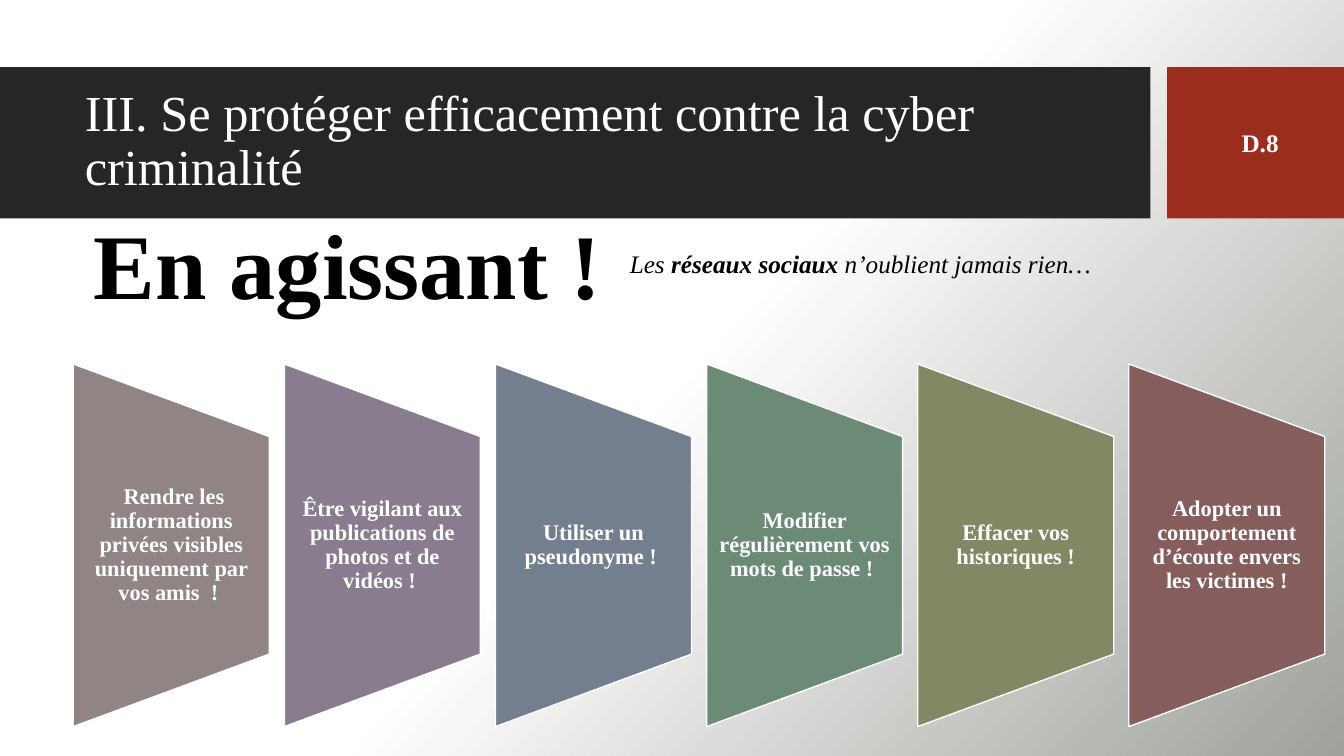
from copy import deepcopy

from pptx import Presentation
from pptx.dml.color import RGBColor
from pptx.enum.shapes import MSO_SHAPE
from pptx.enum.text import MSO_ANCHOR, PP_ALIGN
from pptx.oxml.ns import qn
from pptx.util import Pt

RECTANGLE = MSO_SHAPE.RECTANGLE
TRAPEZOID = MSO_SHAPE.FLOWCHART_MANUAL_OPERATION
TOP, MIDDLE = MSO_ANCHOR.TOP, MSO_ANCHOR.MIDDLE
LEFT, CENTER = PP_ALIGN.LEFT, PP_ALIGN.CENTER
FONT = "Times New Roman"


def color(value):
    return RGBColor.from_string(value)


def add_text(page, left, top, width, height, spans, size, fill,
             anchor=TOP, align=LEFT, spacing=1.0, wrap=True, inset=7.2, inset_y=3.6):
    box = page.shapes.add_textbox(Pt(left), Pt(top), Pt(width), Pt(height))
    frame = box.text_frame
    frame.word_wrap = wrap
    frame.vertical_anchor = anchor
    frame.margin_left = frame.margin_right = Pt(inset)
    frame.margin_top = frame.margin_bottom = Pt(inset_y)
    para = frame.paragraphs[0]
    para.alignment = align
    para.line_spacing = spacing
    for text, bold, italic in spans:
        span = para.add_run()
        span.text = text
        span.font.name = FONT
        span.font.size = Pt(size)
        span.font.bold = bold
        span.font.italic = italic
        span.font.color.rgb = color(fill)


deck = Presentation()
deck.slide_width, deck.slide_height = Pt(960), Pt(540)
page = deck.slides.add_slide(deck.slide_layouts[6])

background = page.background.fill
background.gradient()
background.gradient_angle = 318
start, end = background.gradient_stops
start.color.rgb, start.position = color("FFFFFF"), 0
end.color.rgb, end.position = color("9FA19A"), 1
stop_list = next(page.element.iter(qn("a:gsLst")))
middle_stop = deepcopy(stop_list[0])
middle_stop.set("pos", "50000")
stop_list.insert(1, middle_stop)

for left, width, fill in [(0, 821.8, "262626"), (833.6, 126.4, "9B2D1F")]:
    band = page.shapes.add_shape(RECTANGLE, Pt(left), Pt(48), Pt(width), Pt(108))
    band.shadow.inherit = False
    band.fill.solid()
    band.fill.fore_color.rgb = color(fill)
    band.line.fill.background()

add_text(page, 53.5, 59, 757, 85,
         [("III. Se protéger efficacement contre la cyber criminalité", False, False)],
         36, "FFFFFF", anchor=MIDDLE, spacing=0.9)

tips = [
    (" Rendre les informations privées visibles uniquement par vos amis  ! ", "918485"),
    ("Être vigilant aux publications de photos et de vidéos ! ", "8A7C8F"),
    ("Utiliser un pseudonyme ! ", "737F8E"),
    ("Modifier régulièrement vos mots de passe ! ", "6B8B77"),
    ("Effacer vos historiques !", "818864"),
    ("Adopter un comportement d’écoute envers les victimes !", "855D5D"),
]
card_width, card_height, card_top, pitch = 140, 259, 260, 150.8
for index, (text, fill) in enumerate(tips):
    left = 52.3 + index * pitch
    card = page.shapes.add_shape(
        TRAPEZOID,
        Pt(left + (card_width - card_height) / 2),
        Pt(card_top + (card_height - card_width) / 2),
        Pt(card_height), Pt(card_width))
    card.rotation = 270
    card.shadow.inherit = False
    card.fill.solid()
    card.fill.fore_color.rgb = color(fill)
    card.line.color.rgb = color("FFFFFF")
    card.line.width = Pt(1)
    add_text(page, left, 311.8, card_width, 155.5, [(text, True, False)], 16, "FFFFFF",
             anchor=MIDDLE, align=CENTER, spacing=0.9, inset=8, inset_y=0)

add_text(page, 879.8, 87.1, 41, 29, [("D.8", True, False)], 18, "FFFFFF", wrap=False)
add_text(page, 59.8, 144.7, 398, 87, [("En agissant !", True, False)], 66, "000000", wrap=False)
add_text(page, 442.8, 173.5, 510, 29,
         [("Les ", False, True), ("réseaux sociaux ", True, True),
          ("n’oublient jamais rien…", False, True)], 18, "000000")

deck.save("out.pptx")
